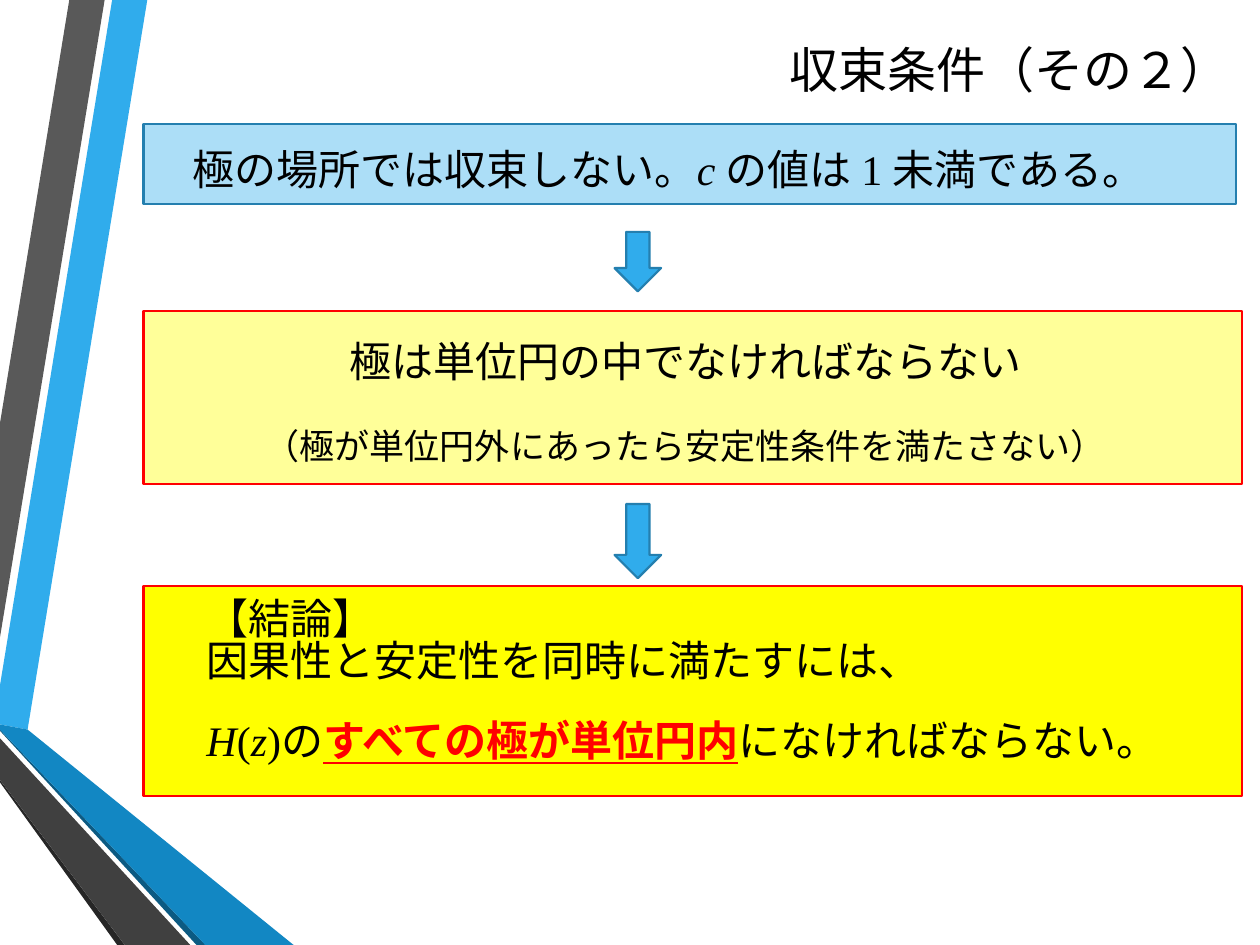
from dataclasses import dataclass
from typing import NamedTuple

import pptx
import pptx.dml.color
import pptx.enum.lang
import pptx.enum.shapes
import pptx.enum.text
import pptx.oxml
import pptx.util

Pt = pptx.util.Pt
ALIGN = pptx.enum.text.PP_ALIGN
PRESET = pptx.enum.shapes.MSO_SHAPE


@dataclass(frozen=True)
class Theme:
    blue: str = "30ACEC"
    blue_edge: str = "247FAF"
    pale_blue: str = "ACDEF7"
    pale_yellow: str = "FFFF99"
    yellow: str = "FFFF00"
    red: str = "FF0000"
    black: str = "000000"
    title_font: str = "Calibri"
    body_font: str = "Times New Roman"
    title_size: float = 28
    body_size: float = 24
    note_size: float = 20
    outline: float = 1.25
    line_height: float = 33.6
    tight_line: float = 12
    gap: float = 6


THEME = Theme()


class Box(NamedTuple):
    left: float
    top: float
    width: float
    height: float


class Panel(NamedTuple):
    preset: int
    box: Box
    fill: str
    edge: str


class Facet(NamedTuple):
    fill: str
    corners: list[tuple[float, float]]


class Phrase(NamedTuple):
    text: str
    italic: bool = False
    strong: bool = False


class Line(NamedTuple):
    phrases: list[Phrase]
    size: float = THEME.body_size
    height: float = THEME.line_height
    align: int = ALIGN.LEFT


# Folded ribbon down the left edge
FACETS = [
    Facet(THEME.blue, [(0, 391.7), (0, 414), (15.8, 416.9), (84.2, 0), (64.1, 0)]),
    Facet("595959", [(59.8, 0), (39.6, 0), (0, 241.9), (0, 364.3)]),
    Facet("262626", [(0, 445.7), (0, 447.1), (67, 540), (71.3, 540)]),
    Facet("0C5A82", [(0, 416.9), (0, 417.6), (112.3, 540), (117.4, 540)]),
    Facet("1287C3", [(0, 416.9), (117.4, 540), (167.8, 540), (15.8, 416.9), (0, 414)]),
    Facet("404040", [(0, 445.7), (71.3, 540), (108.7, 540), (0, 421.9)]),
]

# Statement panels and the arrows between them
PANEL_LEFT, PANEL_WIDTH = 82, 628
ARROW_LEFT, ARROW_WIDTH = 351.2, 26.6
PANELS = [
    Panel(PRESET.RECTANGLE, Box(PANEL_LEFT, 70.8, 624.4, 45.6),
          THEME.pale_blue, THEME.blue_edge),
    Panel(PRESET.RECTANGLE, Box(PANEL_LEFT, 177.7, PANEL_WIDTH, 98.8),
          THEME.pale_yellow, THEME.red),
    Panel(PRESET.RECTANGLE, Box(PANEL_LEFT, 334.8, PANEL_WIDTH, 120.2),
          THEME.yellow, THEME.red),
    Panel(PRESET.DOWN_ARROW, Box(ARROW_LEFT, 132.5, ARROW_WIDTH, 34),
          THEME.blue, THEME.blue_edge),
    Panel(PRESET.DOWN_ARROW, Box(ARROW_LEFT, 288, ARROW_WIDTH, 42.4),
          THEME.blue, THEME.blue_edge),
]

# Wording
PREMISE = [Line([Phrase("極の場所では収束しない。"), Phrase("c ", italic=True),
                 Phrase("の値は 1 未満である。")])]
REQUIREMENT = [
    Line([Phrase("極は単位円の中でなければならない")], align=ALIGN.CENTER),
    Line([Phrase("（極が単位円外にあったら安定性条件を満たさない）")],
         size=THEME.note_size, align=ALIGN.CENTER),
]
CONCLUSION = [
    Line([Phrase("【結論】")]),
    Line([Phrase("因果性と安定性を同時に満たすには、")], height=THEME.tight_line),
    Line([Phrase("H", italic=True), Phrase("("), Phrase("z", italic=True), Phrase(")の"),
          Phrase("すべての極が単位円内", strong=True), Phrase("になければならない。")]),
]


def rgb(value: str) -> pptx.dml.color.RGBColor:
    return pptx.dml.color.RGBColor.from_string(value)


def place(shape, box: Box) -> None:
    shape.left, shape.top, shape.width, shape.height = map(Pt, box)


def draw_facet(shapes, facet: Facet) -> None:
    start, *rest = [(Pt(x), Pt(y)) for x, y in facet.corners]
    builder = shapes.build_freeform(*start)
    builder.add_line_segments(rest, close=True)
    ribbon = builder.convert_to_shape()
    ribbon.shadow.inherit = False
    ribbon.fill.solid()
    ribbon.fill.fore_color.rgb = rgb(facet.fill)
    ribbon.line.fill.background()


def draw_panel(shapes, panel: Panel) -> None:
    shape = shapes.add_shape(panel.preset, *map(Pt, panel.box))
    shape.shadow.inherit = False
    shape.fill.solid()
    shape.fill.fore_color.rgb = rgb(panel.fill)
    shape.line.color.rgb = rgb(panel.edge)
    shape.line.width = Pt(THEME.outline)


def style(font, name: str, size: float, color: str) -> None:
    font.name, font.size = name, Pt(size)
    font.color.rgb = rgb(color)
    font.language_id = pptx.enum.lang.MSO_LANGUAGE_ID.JAPANESE


def write(frame, lines: list[Line]) -> None:
    frame.word_wrap = True
    frame.auto_size = pptx.enum.text.MSO_AUTO_SIZE.NONE
    frame.vertical_anchor = pptx.enum.text.MSO_ANCHOR.TOP
    for number, line in enumerate(lines):
        paragraph = frame.add_paragraph() if number else frame.paragraphs[0]
        paragraph.alignment = line.align
        paragraph.line_spacing = Pt(line.height)
        paragraph.space_before = Pt(THEME.gap if number else 0)
        paragraph.space_after = Pt(THEME.gap)
        for phrase in line.phrases:
            run = paragraph.add_run()
            run.text = phrase.text
            style(run.font, THEME.body_font, line.size,
                  THEME.red if phrase.strong else THEME.black)
            run.font.italic = phrase.italic
            run.font.bold = run.font.underline = phrase.strong


def main() -> None:
    deck = pptx.Presentation()
    deck.slide_width, deck.slide_height = Pt(720), Pt(540)
    slide = deck.slides.add_slide(deck.slide_layouts[1])
    shapes = slide.shapes

    for facet in FACETS:
        draw_facet(shapes, facet)
    for panel in PANELS:
        draw_panel(shapes, panel)

    # Title
    title = shapes.title
    place(title, Box(103, 16.6, 607, 46))
    title.text_frame.text = "収束条件（その２）"
    title.text_frame.vertical_anchor = pptx.enum.text.MSO_ANCHOR.MIDDLE
    heading = title.text_frame.paragraphs[0]
    heading.alignment = ALIGN.RIGHT
    style(heading.runs[0].font, THEME.title_font, THEME.title_size, THEME.black)

    # Premise, unbulleted and in front of its panel
    premise = slide.placeholders[1]
    place(premise, Box(103, 73.4, 599, 39.6))
    properties = premise.text_frame.paragraphs[0]._p.get_or_add_pPr()
    properties.set("marL", "0")
    properties.set("indent", "0")
    properties.append(pptx.oxml.parse_xml(
        '<a:buNone xmlns:a="http://schemas.openxmlformats.org/drawingml/2006/main"/>'))
    write(premise.text_frame, PREMISE)
    for placeholder in (premise, title):
        shapes._spTree.append(placeholder._element)

    # Requirement and conclusion
    for box, lines in ((Box(103, 183.6, 577.4, 39.6), REQUIREMENT),
                       (Box(110.9, 330.5, 599, 124.6), CONCLUSION)):
        write(shapes.add_textbox(*map(Pt, box)).text_frame, lines)

    deck.save("out.pptx")


if __name__ == "__main__":
    main()
